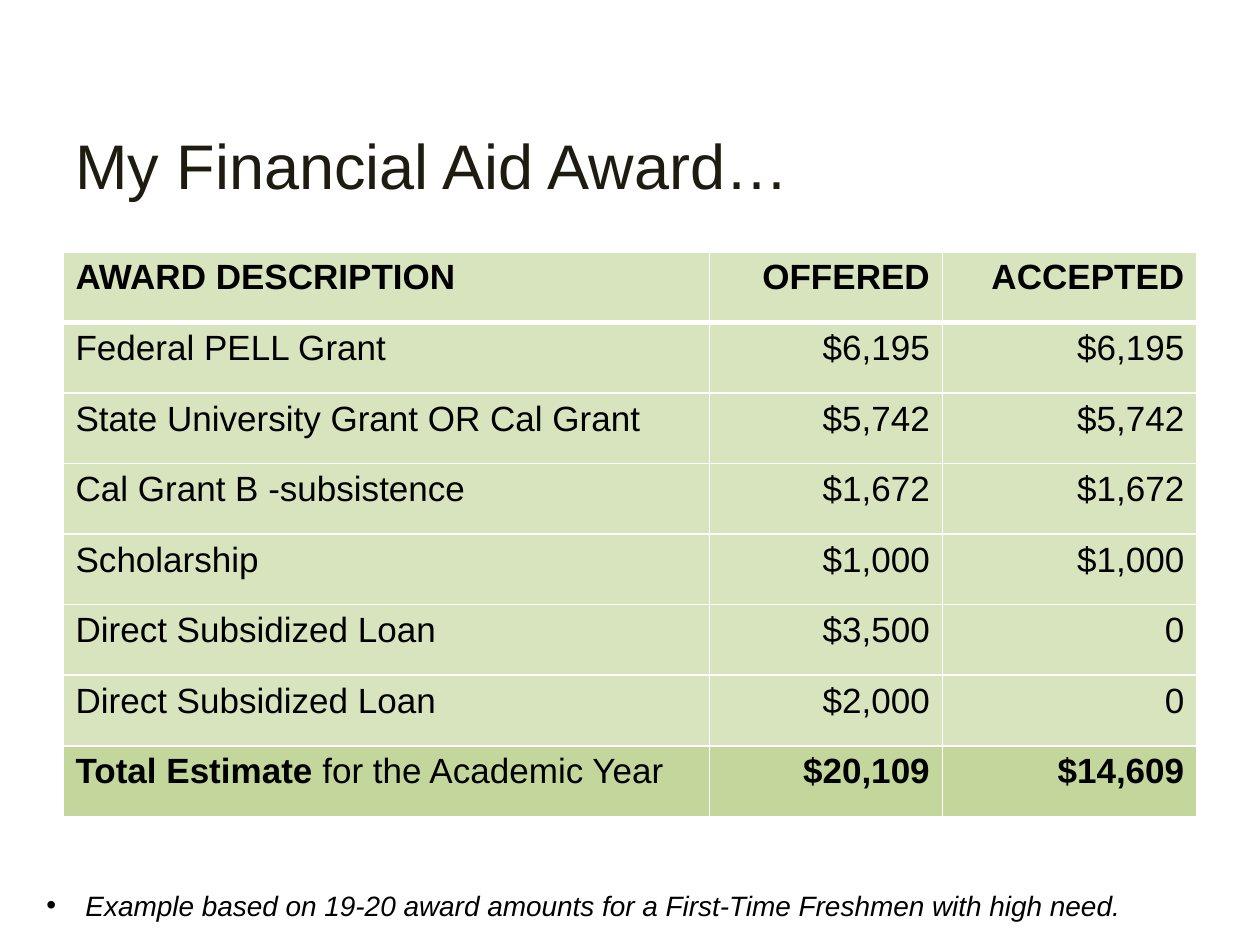
from lxml.etree import SubElement
from pptx import Presentation
from pptx.dml.color import RGBColor
from pptx.enum.text import MSO_ANCHOR, PP_ALIGN
from pptx.oxml.ns import qn
from pptx.util import Inches, Pt

COLORS = {
    "title": "1E1C11",
    "text": "000000",
    "border": "FFFFFF",
    "row": "D7E4BD",
    "total": "C3D69B",
}
TITLE = "My Financial Aid Award…"
HEADER = ("AWARD DESCRIPTION", "OFFERED", "ACCEPTED")
AWARDS = [
    ("Federal PELL Grant", "$6,195", "$6,195"),
    ("State University Grant OR Cal Grant", "$5,742", "$5,742"),
    ("Cal Grant B -subsistence", "$1,672", "$1,672"),
    ("Scholarship", "$1,000", "$1,000"),
    ("Direct Subsidized Loan", "$3,500", "0"),
    ("Direct Subsidized Loan", "$2,000", "0"),
]
TOTAL_LABEL = ("Total Estimate ", "for the Academic Year")
TOTALS = ("$20,109", "$14,609")
NOTE = "Example based on 19-20 award amounts for a First-Time Freshmen with high need."
COLUMN_WIDTHS = (5.13, 1.85, 2.02)
ROW_HEIGHT = 0.56


def add_text(paragraph, text, size=20, color="text", bold=False, italic=False,
             align=PP_ALIGN.LEFT):
    paragraph.alignment = align
    run = paragraph.add_run()
    run.text = text
    run.font.name = "Arial"
    run.font.size = Pt(size)
    run.font.bold = bold
    run.font.italic = italic
    run.font.color.rgb = RGBColor.from_string(COLORS[color])


def add_box(slide, left, top, width, height, anchor=MSO_ANCHOR.TOP):
    box = slide.shapes.add_textbox(*map(Inches, (left, top, width, height)))
    box.text_frame.word_wrap = True
    box.text_frame.vertical_anchor = anchor
    return box.text_frame.paragraphs[0]


def add_bullet(paragraph, indent):
    properties = paragraph._p.get_or_add_pPr()
    properties.set("marL", str(Inches(indent)))
    properties.set("indent", str(-Inches(indent)))
    SubElement(properties, qn("a:buFont"), typeface="Arial")
    SubElement(properties, qn("a:buChar"), char="•")


def style_cell(cell, fill, top_width, bottom_width):
    properties = cell._tc.get_or_add_tcPr()
    widths = {"a:lnL": 1, "a:lnR": 1, "a:lnT": top_width, "a:lnB": bottom_width}
    for tag, width in widths.items():
        line = SubElement(properties, qn(tag), w=str(Pt(width)))
        solid = SubElement(line, qn("a:solidFill"))
        SubElement(solid, qn("a:srgbClr"), val=COLORS["border"])
    cell.fill.solid()
    cell.fill.fore_color.rgb = RGBColor.from_string(COLORS[fill])


def add_award_table(slide):
    rows = [HEADER, *AWARDS, (TOTAL_LABEL, *TOTALS)]
    last = len(rows) - 1
    table = slide.shapes.add_table(
        len(rows), len(HEADER), Inches(0.5), Inches(2),
        Inches(sum(COLUMN_WIDTHS)), Inches(ROW_HEIGHT * len(rows))).table
    for column, width in zip(table.columns, COLUMN_WIDTHS):
        column.width = Inches(width)
    for row_index, row in enumerate(rows):
        table.rows[row_index].height = Inches(ROW_HEIGHT)
        for column_index, content in enumerate(row):
            cell = table.cell(row_index, column_index)
            style_cell(cell, "total" if row_index == last else "row",
                       3 if row_index == 1 else 1, 3 if row_index == 0 else 1)
            parts = (content,) if isinstance(content, str) else content
            for part_index, part in enumerate(parts):
                add_text(cell.text_frame.paragraphs[0], part,
                         bold=row_index in (0, last) and part_index == 0,
                         align=PP_ALIGN.RIGHT if column_index else PP_ALIGN.LEFT)


def main():
    presentation = Presentation()
    presentation.slide_width = Inches(10)
    presentation.slide_height = Inches(7.5)
    slide = presentation.slides.add_slide(presentation.slide_layouts[6])
    title = add_box(slide, 0.5, 0.92, 6.02, 0.77, anchor=MSO_ANCHOR.MIDDLE)
    add_text(title, TITLE, size=36, color="title")
    add_award_table(slide)
    note = add_box(slide, 0.27, 7, 8.81, 0.37)
    add_bullet(note, 0.31)
    add_text(note, NOTE, size=16, italic=True)
    presentation.save("out.pptx")


if __name__ == "__main__":
    main()
